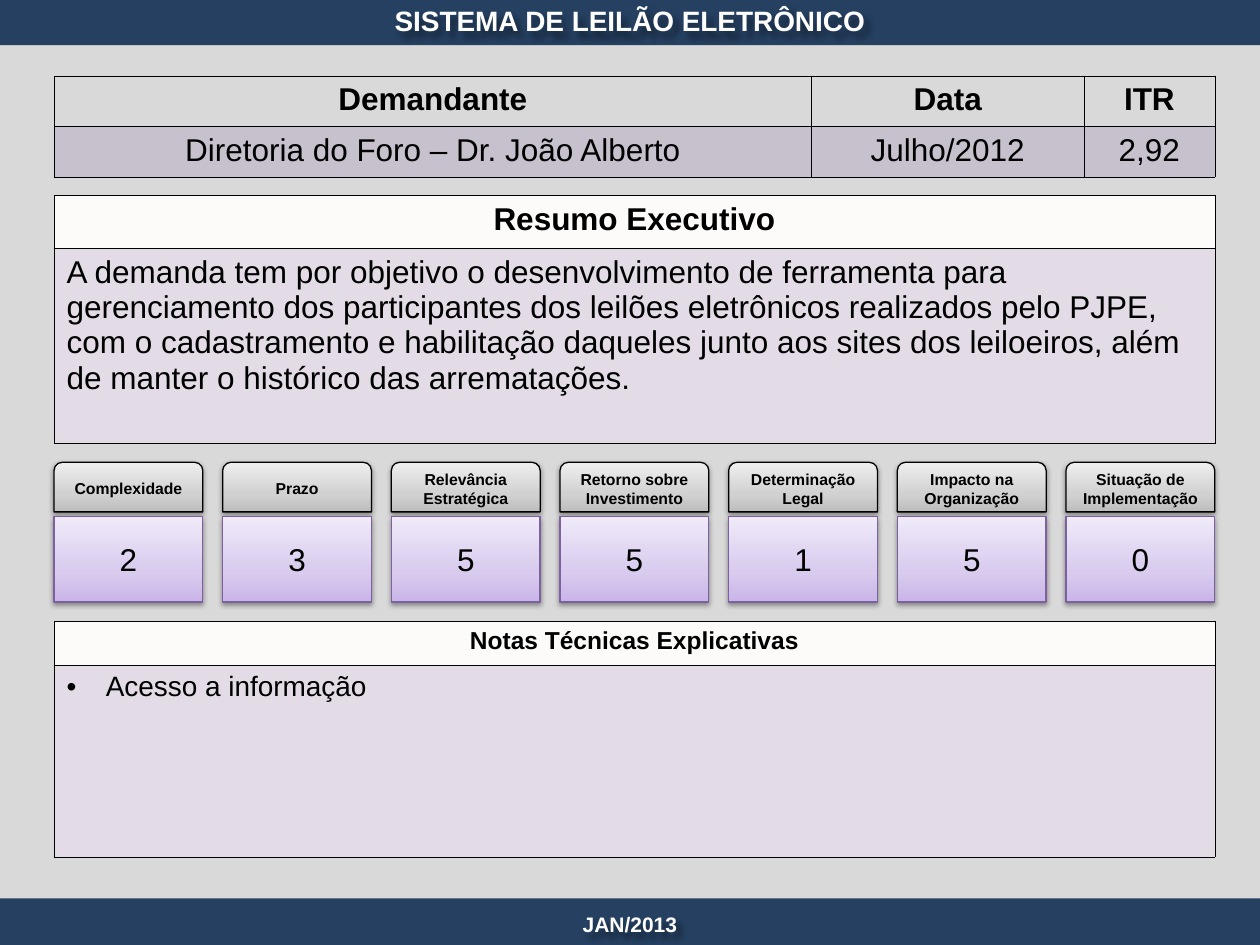
import copy
import dataclasses

import lxml.etree
import pptx
import pptx.dml.color
import pptx.enum.shapes
import pptx.enum.text
import pptx.oxml.ns
import pptx.util

Cm = pptx.util.Cm
Pt = pptx.util.Pt
SHAPE = pptx.enum.shapes.MSO_SHAPE
ALIGN = pptx.enum.text.PP_ALIGN
MIDDLE = pptx.enum.text.MSO_ANCHOR.MIDDLE
qn = pptx.oxml.ns.qn


def rgb(value):
    return pptx.dml.color.RGBColor.from_string(value)


def add_xml(parent, tag, **attrs):
    return lxml.etree.SubElement(parent, qn(tag), {k: str(v) for k, v in attrs.items()})


@dataclasses.dataclass(frozen=True)
class Theme:
    font: str = "Arial"
    black: str = "000000"
    white: str = "FFFFFF"
    navy: str = "254061"
    backdrop: str = "D9D9D9"
    paper: str = "FCFBF9"
    purple: str = "8064A2"
    purple_line: str = "7D60A0"
    grays: tuple = ("BDBDBD", "D1D1D1", "EEEEEE")
    lilacs: tuple = ("C9B5E8", "D8CBEE", "F0EAF9")
    stops: tuple = (0, 0.35, 1)
    label: int = 9
    footer: int = 12
    subhead: int = 14
    title: int = 16
    body: int = 18


class Builder:
    def __init__(self, slide, theme):
        self.s = slide
        self.theme = theme

    def text(self, tf, text, size, bold=False, color=None, align=ALIGN.CENTER, bullet=False):
        p = tf.paragraphs[0]
        p.alignment = align
        if bullet:
            pPr = p._p.get_or_add_pPr()
            pPr.set("marL", str(Cm(0.79)))
            pPr.set("indent", str(Cm(-0.79)))
            add_xml(pPr, "a:buFont", typeface=self.theme.font)
            add_xml(pPr, "a:buChar", char="•")
        r = p.add_run()
        r.text = text
        for key, value in {"name": self.theme.font, "size": Pt(size), "bold": bold}.items():
            setattr(r.font, key, value)
        r.font.color.rgb = rgb(color or self.theme.black)

    def shadow(self, sp, blur, dist, angle):
        sp.shadow.inherit = False
        effects = sp._element.spPr.find(qn("a:effectLst"))
        outer = add_xml(effects, "a:outerShdw", blurRad=Pt(blur), dist=Pt(dist),
                        dir=angle * 60000, algn="ctr", rotWithShape=0)
        add_xml(add_xml(outer, "a:srgbClr", val=self.theme.black), "a:alpha", val=38000)

    def panel(self, x, y, w, h, color):
        sp = self.s.shapes.add_shape(SHAPE.RECTANGLE, Cm(x), Cm(y), Cm(w), Cm(h))
        sp.shadow.inherit = False
        sp.fill.solid()
        sp.fill.fore_color.rgb = rgb(color)
        sp.line.fill.background()

    def banner_text(self, y, h, text, size):
        sp = self.s.shapes.add_textbox(0, Cm(y), Cm(25.4), Cm(h))
        tf = sp.text_frame
        tf.word_wrap = True
        tf.vertical_anchor = MIDDLE
        self.shadow(sp, 3, 3, 45)
        self.text(tf, text, size, True, self.theme.white)

    def card(self, kind, x, y, w, h, colors, line, text, size, bold):
        sp = self.s.shapes.add_shape(kind, Cm(x), Cm(y), Cm(w), Cm(h))
        fill = sp.fill
        fill.gradient()
        fill.gradient_angle = 90
        stops = sp._element.spPr.find(".//" + qn("a:gsLst"))
        stops.insert(1, copy.deepcopy(stops[0]))
        for stop, position, color in zip(fill.gradient_stops, self.theme.stops, colors):
            stop.position = position
            stop.color.rgb = rgb(color)
        sp.line.color.rgb = rgb(line)
        sp.line.width = Pt(0.75)
        self.shadow(sp, 3.1, 1.6, 90)
        tf = sp.text_frame
        tf.word_wrap = True
        tf.vertical_anchor = MIDDLE
        self.text(tf, text, size, bold)

    def borders(self, cell):
        tcPr = cell._tc.get_or_add_tcPr()
        for side in ("a:lnL", "a:lnR", "a:lnT", "a:lnB"):
            ln = add_xml(tcPr, side, w=Pt(0.25))
            add_xml(add_xml(ln, "a:solidFill"), "a:srgbClr", val=self.theme.black)

    def table(self, x, y, cols, rows, header, body, head_size, body_format):
        frame = self.s.shapes.add_table(len(rows), len(cols), Cm(x), Cm(y),
                                        Cm(sum(cols)), Cm(sum(rows)))
        table = frame.table
        table.first_row = table.horz_banding = False
        for column, width in zip(table.columns, cols):
            column.width = Cm(width)
        for row, height in zip(table.rows, rows):
            row.height = Cm(height)
        for i, (head, text) in enumerate(zip(header, body)):
            top, bottom = table.cell(0, i), table.cell(1, i)
            self.borders(top)
            top.fill.background()
            self.text(top.text_frame, head, head_size, True)
            self.borders(bottom)
            bottom.fill.solid()
            bottom.fill.fore_color.rgb = rgb(self.theme.purple)
            tint = bottom._tc.tcPr.find(qn("a:solidFill"))[0]
            add_xml(tint, "a:alpha", val=20000)
            self.text(bottom.text_frame, text, **body_format)


def main():
    prs = pptx.Presentation()
    prs.slide_width, prs.slide_height = Cm(25.4), Cm(19.05)
    theme = Theme()
    b = Builder(prs.slides.add_slide(prs.slide_layouts[6]), theme)
    left, width = 1.09, 23.4

    b.panel(0, 0.91, 25.4, 17.4, theme.backdrop)
    b.panel(0, 18.11, 25.4, 0.94, theme.navy)
    b.panel(0, -0.03, 25.4, 0.94, theme.navy)
    b.banner_text(18.14, 1, "JAN/2013", theme.footer)
    b.banner_text(-0.28, 1.4, "SISTEMA DE LEILÃO ELETRÔNICO", theme.title)

    b.table(left, 1.53, (15.27, 5.49, 2.64), (1, 1), ("Demandante", "Data", "ITR"),
            ("Diretoria do Foro – Dr. João Alberto", "Julho/2012", "2,92"),
            theme.body, {"size": theme.body})

    summary = (
        "A demanda tem por objetivo o desenvolvimento de ferramenta para gerenciamento "
        "dos participantes dos leilões eletrônicos realizados pelo PJPE, com o "
        "cadastramento e habilitação daqueles junto aos sites dos leiloeiros, além de "
        "manter o histórico das arrematações."
    )
    sections = (
        (3.94, (1.07, 3.93), "Resumo Executivo", summary, theme.body,
         {"size": theme.body, "align": ALIGN.LEFT}),
        (12.52, (0.89, 3.87), "Notas Técnicas Explicativas", "Acesso a informação",
         theme.subhead, {"size": theme.title, "align": ALIGN.LEFT, "bullet": True}),
    )
    for y, rows, head, text, head_size, body_format in sections:
        b.panel(left, y, width, sum(rows), theme.paper)
        b.table(left, y, (width,), rows, (head,), (text,), head_size, body_format)

    scores = (
        ("Complexidade", 2),
        ("Prazo", 3),
        ("Relevância Estratégica", 5),
        ("Retorno sobre Investimento", 5),
        ("Determinação Legal", 1),
        ("Impacto na Organização", 5),
        ("Situação de Implementação", 0),
    )
    for i, (label, score) in enumerate(scores):
        x = left + 3.4 * i
        b.card(SHAPE.ROUND_2_SAME_RECTANGLE, x, 9.32, 3, 1, theme.grays, theme.black,
               label, theme.label, True)
        b.card(SHAPE.RECTANGLE, x, 10.41, 3, 1.73, theme.lilacs, theme.purple_line,
               str(score), theme.body, False)

    prs.save("out.pptx")


if __name__ == "__main__":
    main()
